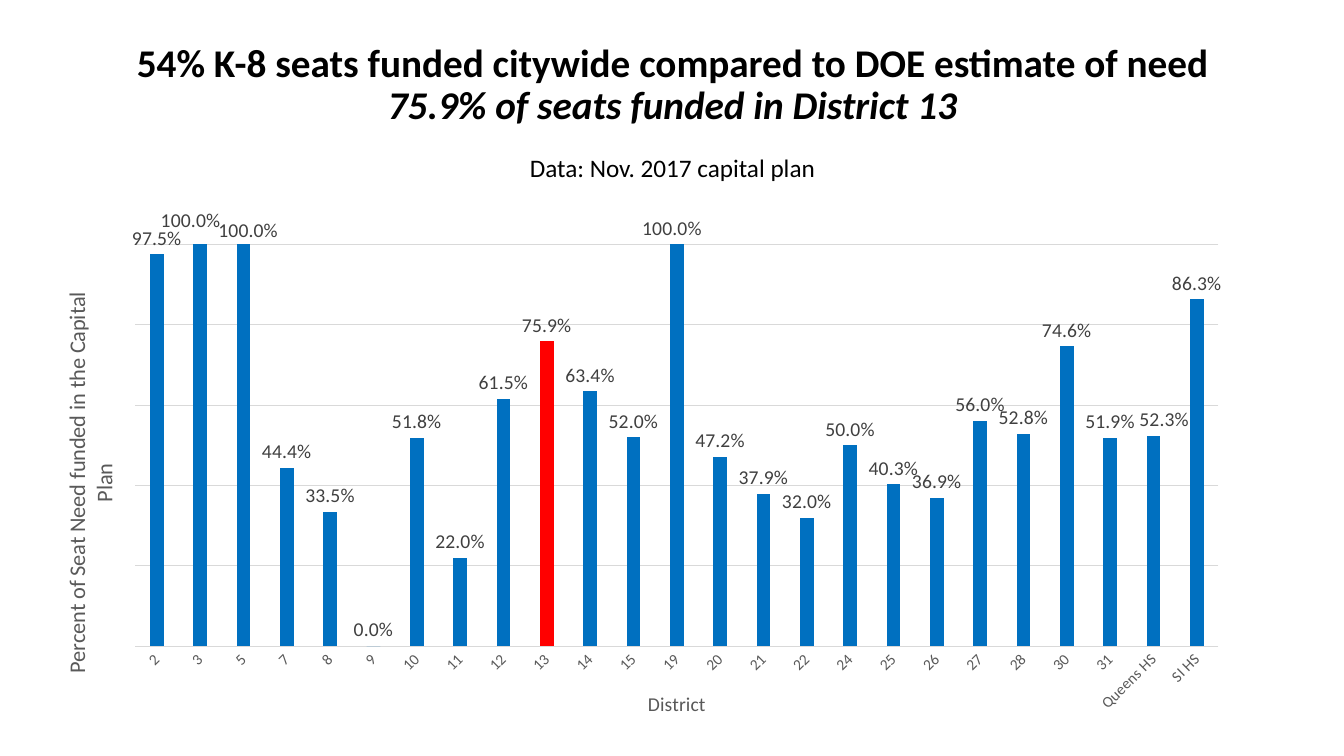
from lxml.etree import SubElement
from pptx import Presentation
from pptx.chart.data import CategoryChartData
from pptx.dml.color import RGBColor
from pptx.enum.chart import XL_CHART_TYPE, XL_LABEL_POSITION, XL_TICK_MARK
from pptx.enum.text import MSO_ANCHOR, PP_ALIGN
from pptx.oxml import parse_xml
from pptx.oxml.ns import nsdecls, qn
from pptx.util import Inches, Pt

DISTRICT_SHARES = {
    "2": 0.975, "3": 1, "5": 1, "7": 0.444, "8": 0.335, "9": 0, "10": 0.518,
    "11": 0.22, "12": 0.615, "13": 0.759, "14": 0.634, "15": 0.52, "19": 1,
    "20": 0.472, "21": 0.379, "22": 0.32, "24": 0.5, "25": 0.403, "26": 0.369,
    "27": 0.56, "28": 0.528, "30": 0.746, "31": 0.519, "Queens HS": 0.523,
    "SI HS": 0.863,
}
LABEL_SHIFTS = {
    "3": (-0.008, -0.015), "5": (0.004, 0.005),
    "19": (-0.004, 0), "Queens HS": (0.009, 0),
}
HIGHLIGHTED = "13"
PERCENT = "0.0%"


def color(hex_value):
    return RGBColor.from_string(hex_value)


def format_font(font, size, hex_value, bold=False, italic=False):
    font.name = "Calibri"
    font.size = Pt(size)
    font.bold = bold
    font.italic = italic
    font.color.rgb = color(hex_value)


def write_text(paragraph, text, size=14, hex_value="000000", bold=False, italic=False):
    run = paragraph.add_run()
    run.text = text
    format_font(run.font, size, hex_value, bold, italic)


def add_layout(parent, position, **values):
    layout = parent.find(qn("c:layout"))
    if layout is None:
        layout = parse_xml(f"<c:layout {nsdecls('c')}/>")
        parent.insert(position, layout)
    manual = SubElement(layout, qn("c:manualLayout"))
    for name, value in values.items():
        SubElement(manual, qn(f"c:{name}")).set("val", str(value))


class SeatSlide:
    """Hold the colours and the current slide, and draw its elements."""

    bar, highlight, grid = "0070C0", "FF0000", "D9D9D9"
    axis_text, label_text = "595959", "404040"

    def __init__(self, presentation):
        self.slide = presentation.slides.add_slide(presentation.slide_layouts[6])

    def add_title(self, left, top, width, height, lines):
        shape = self.slide.shapes.add_textbox(
            Inches(left), Inches(top), Inches(width), Inches(height))
        shape.fill.solid()
        shape.fill.fore_color.rgb = color("FFFFFF")
        frame = shape.text_frame
        frame.word_wrap = True
        frame.vertical_anchor = MSO_ANCHOR.MIDDLE
        for index, (text, space_before, text_format) in enumerate(lines):
            paragraph = frame.add_paragraph() if index else frame.paragraphs[0]
            paragraph.alignment = PP_ALIGN.CENTER
            paragraph.line_spacing = 0.9
            paragraph.space_before = Pt(space_before)
            write_text(paragraph, text, **text_format)

    def add_chart(self, left, top, width, height):
        data = CategoryChartData(number_format=PERCENT)
        data.categories = list(DISTRICT_SHARES)
        data.add_series("Series 1", list(DISTRICT_SHARES.values()))
        chart = self.slide.shapes.add_chart(
            XL_CHART_TYPE.COLUMN_CLUSTERED, Inches(left), Inches(top),
            Inches(width), Inches(height), data).chart
        chart.has_legend = False
        chart.has_title = False
        format_font(chart.font, 10, "000000")
        add_layout(chart.element.find(".//" + qn("c:plotArea")), 0,
                   layoutTarget="inner", xMode="edge", yMode="edge",
                   x=0.081, y=0.098, w=0.906, h=0.758)
        self.style_axes(chart)
        self.style_bars(chart)

    def add_axis_title(self, axis, text, size):
        write_text(axis.axis_title.text_frame.paragraphs[0], text, size, self.axis_text)
        return axis.axis_title.element if hasattr(axis.axis_title, "element") else None

    def style_axes(self, chart):
        districts, shares = chart.category_axis, chart.value_axis
        self.add_axis_title(districts, "District", 14)
        districts.major_tick_mark = XL_TICK_MARK.NONE
        districts.format.line.color.rgb = color(self.grid)
        districts.format.line.width = Pt(0.75)
        format_font(districts.tick_labels.font, 11, self.axis_text)
        chart.element.find(".//" + qn("c:catAx") + "/" + qn("c:txPr")
                           + "/" + qn("a:bodyPr")).set("rot", "-2700000")

        self.add_axis_title(
            shares, "Percent of Seat Need funded in the Capital Plan", 16)
        title = chart.element.find(".//" + qn("c:valAx") + "/" + qn("c:title"))
        title.find(".//" + qn("a:bodyPr")).set("rot", "-5400000")
        add_layout(title, 1, xMode="edge", yMode="edge", x=0.016, y=0.18)
        shares.minimum_scale, shares.maximum_scale = 0, 1
        shares.major_unit = 0.2
        shares.visible = False
        shares.major_gridlines.format.line.color.rgb = color(self.grid)
        shares.major_gridlines.format.line.width = Pt(0.75)

    def style_bars(self, chart):
        plot = chart.plots[0]
        plot.gap_width, plot.overlap = 219, -27
        plot.vary_by_categories = False
        series = plot.series[0]
        series.format.fill.solid()
        series.format.fill.fore_color.rgb = color(self.bar)
        districts = list(DISTRICT_SHARES)
        fill = series.points[districts.index(HIGHLIGHTED)].format.fill
        fill.solid()
        fill.fore_color.rgb = color(self.highlight)

        labels = series.data_labels
        labels.show_value = True
        labels.position = XL_LABEL_POSITION.OUTSIDE_END
        labels.number_format = PERCENT
        labels.number_format_is_linked = False
        format_font(labels.font, 14, self.label_text)
        for district, (x, y) in LABEL_SHIFTS.items():
            index = districts.index(district)
            label = series.points[index].data_label
            label.position = XL_LABEL_POSITION.OUTSIDE_END
            format_font(label.font, 14, self.label_text)
            element = chart.element.xpath(f'.//c:dLbl[c:idx/@val="{index}"]')[0]
            add_layout(element, 1, x=x, y=y)
            element.insert(2, parse_xml(
                f'<c:numFmt {nsdecls("c")} formatCode="{PERCENT}" sourceLinked="0"/>'))


def main():
    presentation = Presentation()
    presentation.slide_width = Inches(13.33)
    presentation.slide_height = Inches(7.5)
    seat_slide = SeatSlide(presentation)
    seat_slide.add_chart(0.38, 1.91, 11.86, 5.26)
    seat_slide.add_title(0.92, 0.38, 11.5, 1.49, [
        ("54% K-8 seats funded citywide compared to DOE estimate of need", 0,
         {"size": 28, "bold": True}),
        ("75.9% of seats funded in District 13", 0,
         {"size": 28, "bold": True, "italic": True}),
        ("Data: Nov. 2017 capital plan", 20, {"size": 18}),
    ])
    presentation.save("out.pptx")


if __name__ == "__main__":
    main()
